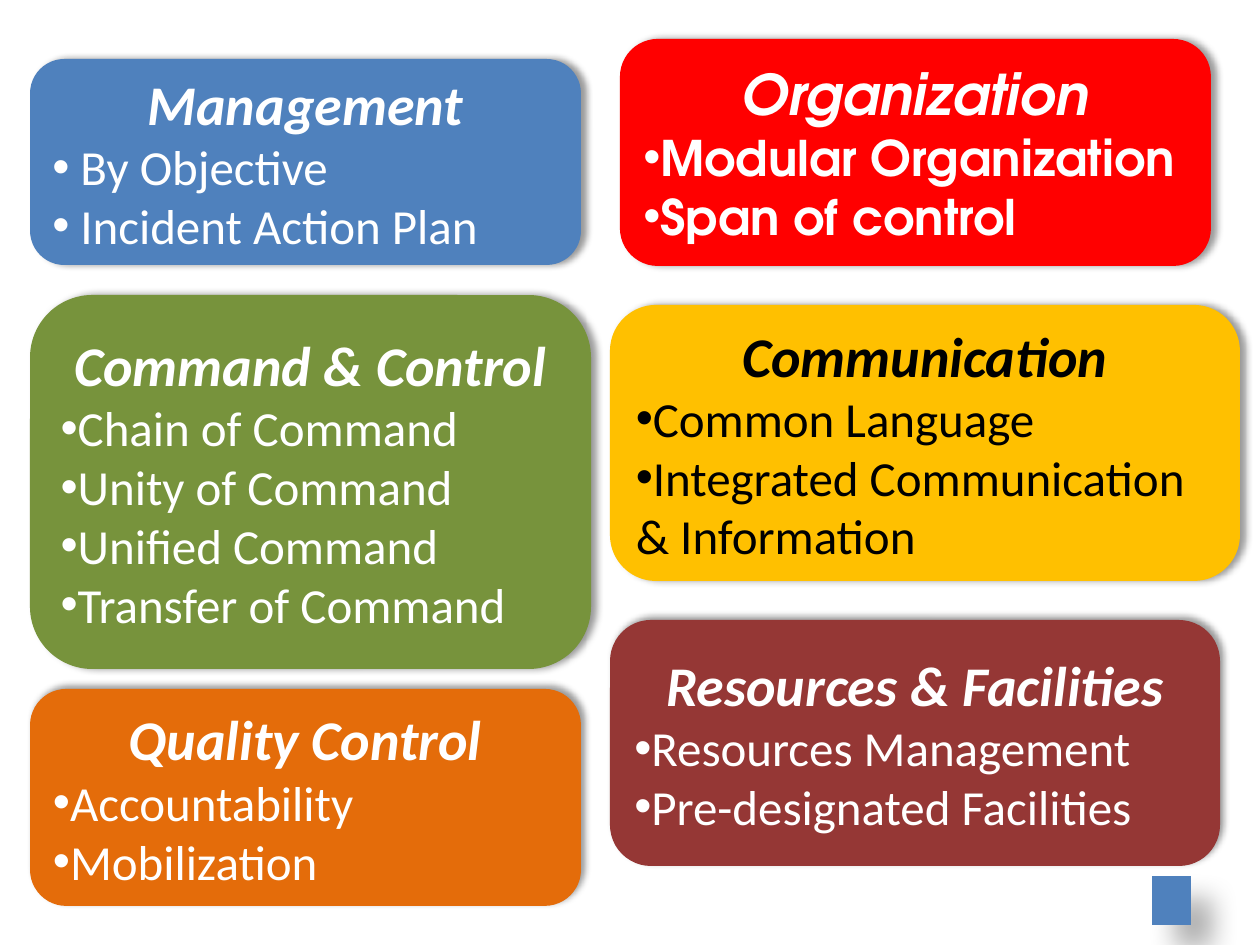
from dataclasses import dataclass

from lxml.etree import SubElement
from pptx import Presentation
from pptx.dml.color import RGBColor
from pptx.enum.shapes import MSO_SHAPE
from pptx.enum.text import MSO_ANCHOR, PP_ALIGN
from pptx.oxml.ns import qn
from pptx.util import Emu, Pt


@dataclass(frozen=True)
class Theme:
    blue: str = "4F81BD"
    green: str = "77933C"
    red: str = "FF0000"
    yellow: str = "FFC000"
    maroon: str = "953735"
    orange: str = "E46C0A"
    light: str = "FFFFFF"
    dark: str = "000000"
    shadow: str = "000000"
    heading_size: int = 32
    item_size: int = 28
    body_font: str = "Calibri"
    accent_font: str = "TeX Gyre Adventor"


@dataclass(frozen=True)
class Shadow:
    opacity: int
    blur: int
    distance: int
    angle: int


@dataclass(frozen=True)
class Principle:
    heading: str
    items: tuple
    bounds: tuple
    fill: str
    ink: str = Theme.light
    font: str = Theme.body_font
    bold_items: bool = False
    hanging: int = 0
    shadow_angle: int = 0


THEME = Theme()

PRINCIPLES = [
    Principle("Management", ("By Objective", "Incident Action Plan"),
              (30, 59, 551, 206), THEME.blue, hanging=28),
    Principle("Command & Control",
              ("Chain of Command", "Unity of Command",
               "Unified Command", "Transfer of Command"),
              (30, 295, 561, 374), THEME.green),
    Principle("Organization", ("Modular Organization", "Span of control"),
              (620, 39, 591, 227), THEME.red,
              font=THEME.accent_font, bold_items=True),
    Principle("Communication",
              ("Common Language", "Integrated Communication & Information"),
              (610, 305, 630, 276), THEME.yellow, ink=THEME.dark),
    Principle("Resources & Facilities",
              ("Resources Management", "Pre-designated Facilities"),
              (610, 620, 610, 246), THEME.maroon, shadow_angle=315),
    Principle("Quality Control", ("Accountability", "Mobilization"),
              (30, 689, 551, 217), THEME.orange, shadow_angle=315),
]


def px(length):
    return Emu(round(length * 914400 / 126))


def cast_shadow(shape, shadow):
    shape.shadow.inherit = False
    effects = shape._element.spPr.find(qn("a:effectLst"))
    outer = SubElement(effects, qn("a:outerShdw"),
                       blurRad=str(Pt(shadow.blur)),
                       dist=str(Pt(shadow.distance)),
                       dir=str(shadow.angle * 60000),
                       algn="ctr", rotWithShape="0")
    color = SubElement(outer, qn("a:srgbClr"), val=THEME.shadow)
    SubElement(color, qn("a:alpha"), val=str(shadow.opacity * 1000))


def add_filled_shape(slide, preset, bounds, fill, shadow):
    shape = slide.shapes.add_shape(preset, *map(px, bounds))
    shape.fill.solid()
    shape.fill.fore_color.rgb = RGBColor.from_string(fill)
    shape.line.fill.background()
    cast_shadow(shape, shadow)
    return shape


def add_bullet(paragraph, hanging):
    properties = paragraph._p.get_or_add_pPr()
    properties.set("marL", str(px(hanging)))
    properties.set("indent", str(-px(hanging)))
    SubElement(properties, qn("a:buFont"), typeface="Arial")
    SubElement(properties, qn("a:buChar"), char="•")


def style_text(paragraph, principle, size, bold, italic):
    for run in paragraph.runs:
        run.font.name = principle.font
        run.font.size = Pt(size)
        run.font.bold = bold
        run.font.italic = italic
        run.font.color.rgb = RGBColor.from_string(principle.ink)


def add_principle(slide, principle):
    card = add_filled_shape(slide, MSO_SHAPE.ROUNDED_RECTANGLE, principle.bounds,
                            principle.fill, Shadow(40, 4, 3, principle.shadow_angle))
    frame = card.text_frame
    frame.word_wrap = True
    frame.vertical_anchor = MSO_ANCHOR.MIDDLE
    frame.text = principle.heading
    heading = frame.paragraphs[0]
    heading.alignment = PP_ALIGN.CENTER
    style_text(heading, principle, THEME.heading_size, True, True)
    for item in principle.items:
        entry = frame.add_paragraph()
        entry.text = item
        entry.alignment = PP_ALIGN.LEFT
        add_bullet(entry, principle.hanging)
        style_text(entry, principle, THEME.item_size, principle.bold_items, False)


def main():
    presentation = Presentation()
    presentation.slide_width = px(1260)
    presentation.slide_height = px(945)
    slide = presentation.slides.add_slide(presentation.slide_layouts[6])
    for principle in PRINCIPLES:
        add_principle(slide, principle)
    add_filled_shape(slide, MSO_SHAPE.ACTION_BUTTON_CUSTOM, (1152, 876, 39, 49),
                     THEME.blue, Shadow(30, 15, 18, 45))
    presentation.save("out.pptx")


if __name__ == "__main__":
    main()
